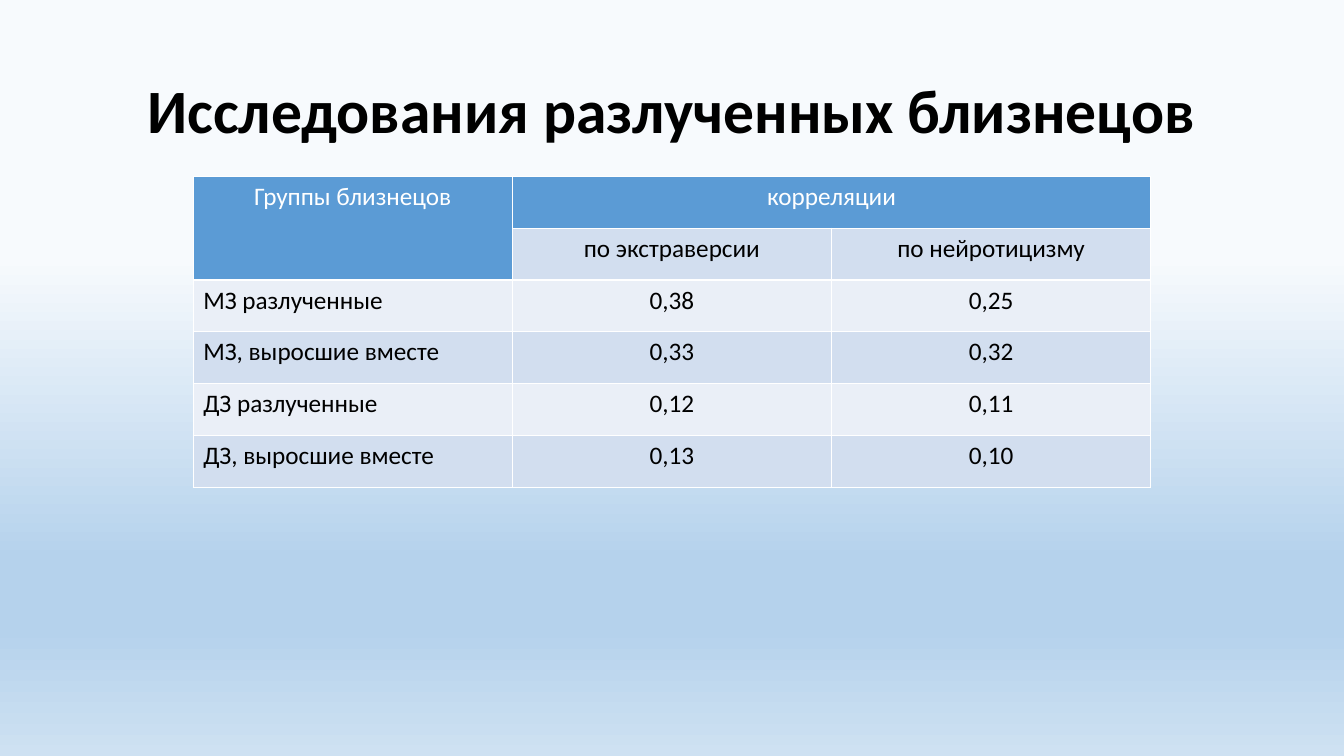
from lxml import etree
from pptx import Presentation
from pptx.dml.color import RGBColor
from pptx.enum import text
from pptx.oxml import ns
from pptx.util import Pt

COLORS = {
    "black": "000000", "white": "FFFFFF", "header": "5B9BD5",
    "band_dark": "D2DEEF", "band_light": "EAEFF7",
    "sky_top": "F7FAFD", "sky_middle": "B5D2EC", "sky_bottom": "CEE1F2",
}
CENTER, LEFT = text.PP_ALIGN.CENTER, text.PP_ALIGN.LEFT


def write(paragraph, wording, size, color, align, bold=False):
    paragraph.alignment = align
    run = paragraph.add_run()
    run.text = wording
    run.font.color.rgb = RGBColor.from_string(COLORS[color])
    formats = {"name": "Calibri", "size": Pt(size), "bold": bold}
    for name, value in formats.items():
        setattr(run.font, name, value)


presentation = Presentation()
presentation.slide_width, presentation.slide_height = Pt(960), Pt(540)
slide = presentation.slides.add_slide(presentation.slide_layouts[6])

# Background gradient, running from top to bottom
fill = slide.background.fill
fill.gradient()
fill.gradient_angle = 270
stop_list = slide.element.xpath(".//p:bg//a:gsLst")[0]
for stop in list(stop_list):
    stop_list.remove(stop)
for percent, color in [(34, "sky_top"), (74, "sky_middle"),
                       (83, "sky_middle"), (100, "sky_bottom")]:
    stop = etree.SubElement(stop_list, ns.qn("a:gs"), pos=str(percent * 1000))
    etree.SubElement(stop, ns.qn("a:srgbClr"), val=COLORS[color])

# Title
title = slide.shapes.add_textbox(Pt(66), Pt(28.8), Pt(828), Pt(104.4))
frame = title.text_frame
frame.word_wrap = True
frame.vertical_anchor = text.MSO_ANCHOR.MIDDLE
frame.paragraphs[0].line_spacing = 0.9
write(frame.paragraphs[0], "Исследования разлученных близнецов", 44, "black", CENTER, True)

# Table of correlations; None marks a cell covered by a merged one
rows = [
    ["Группы близнецов", "корреляции", None],
    [None, "по экстраверсии", "по нейротицизму"],
    ["МЗ разлученные", "0,38", "0,25"],
    ["МЗ, выросшие вместе", "0,33", "0,32"],
    ["ДЗ разлученные", "0,12", "0,11"],
    ["ДЗ, выросшие вместе", "0,13", "0,10"],
]
table = slide.shapes.add_table(len(rows), 3, Pt(138), Pt(126), Pt(684), Pt(222)).table
table.cell(0, 0).merge(table.cell(1, 0))
table.cell(0, 1).merge(table.cell(0, 2))

for row_index, row in enumerate(rows):
    for column_index, wording in enumerate(row):
        cell = table.cell(row_index, column_index)
        is_header = row_index == 0 or wording is None
        band = "band_dark" if row_index % 2 else "band_light"
        cell.fill.solid()
        cell.fill.fore_color.rgb = RGBColor.from_string(COLORS["header" if is_header else band])
        if wording:
            align = LEFT if column_index == 0 and not is_header else CENTER
            write(cell.text_frame.paragraphs[0], wording, 18,
                  "white" if is_header else "black", align)

presentation.save("out.pptx")
